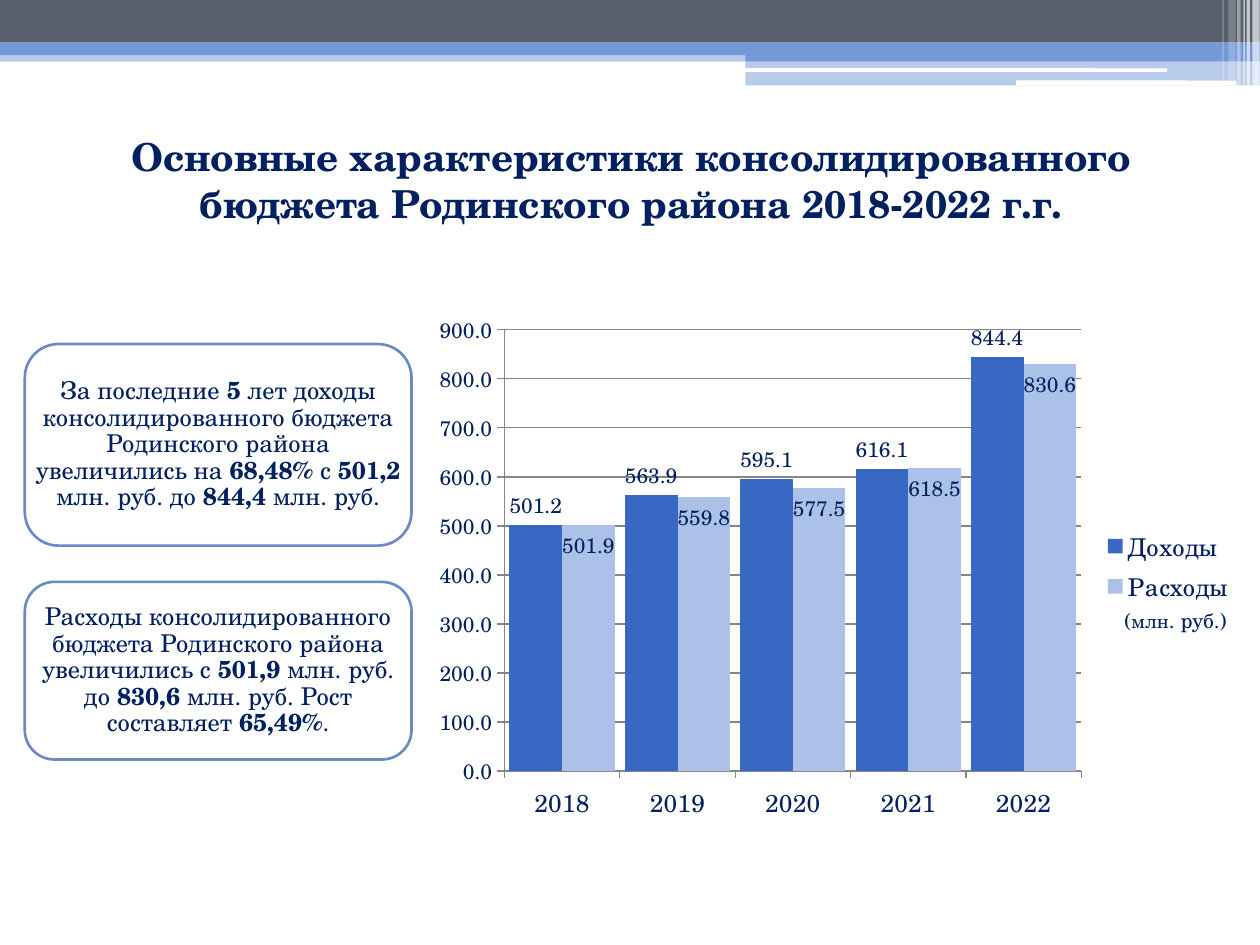
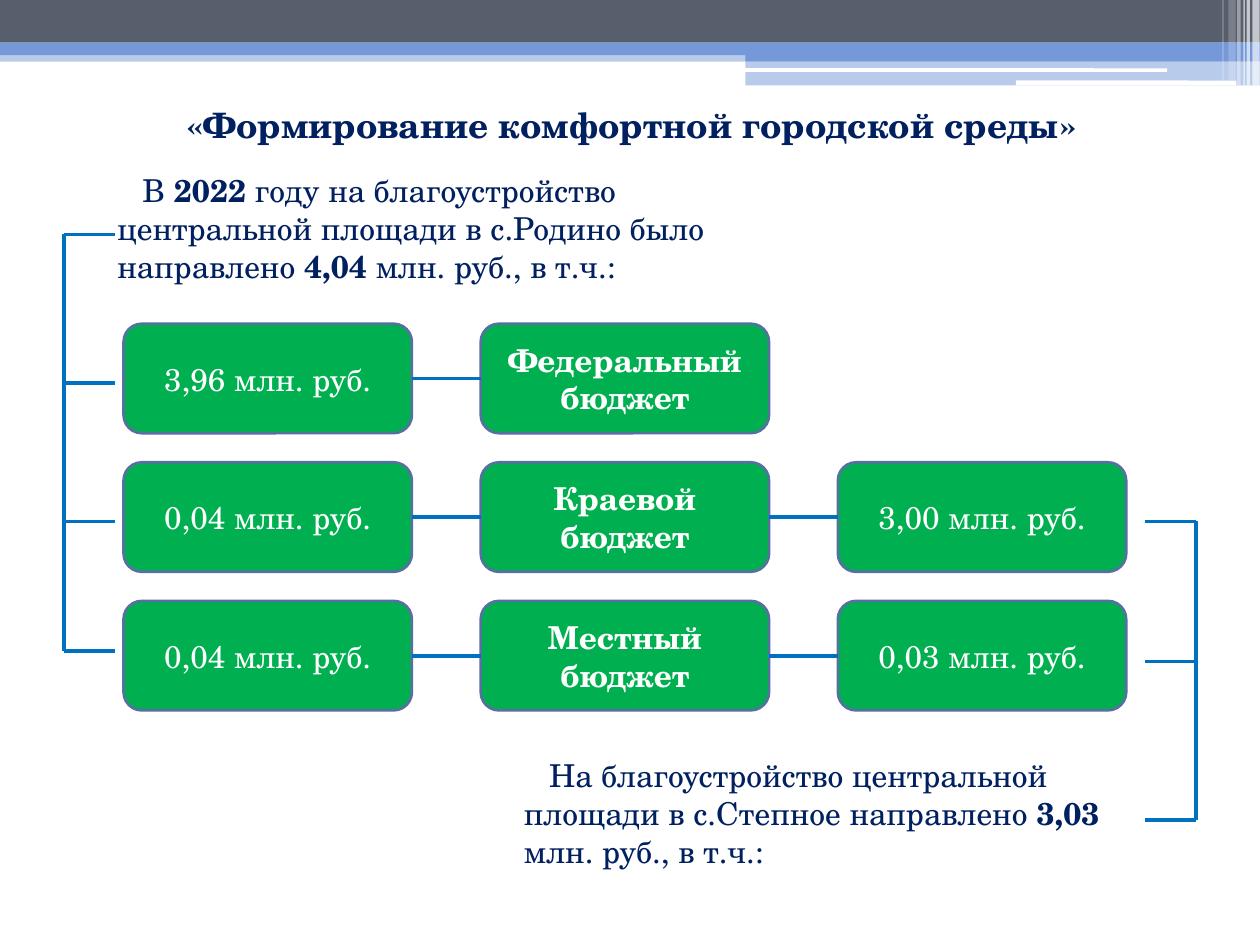
from typing import NamedTuple

from lxml.etree import SubElement
from pptx import Presentation
from pptx.chart.data import CategoryChartData
from pptx.dml.color import RGBColor
from pptx.enum.chart import XL_CHART_TYPE, XL_LABEL_POSITION, XL_LEGEND_POSITION, XL_TICK_MARK
from pptx.enum.shapes import MSO_CONNECTOR, MSO_SHAPE
from pptx.enum.text import MSO_ANCHOR, MSO_AUTO_SIZE, PP_ALIGN
from pptx.oxml.ns import qn
from pptx.util import Pt

FONT = "TeX Gyre Schola"
NAVY, WHITE, GREY, SKY = "002060", "FFFFFF", "575F6D", "7598D9"
GREEN, GREEN_EDGE, NOTE_EDGE, LINK = "00B050", "5770A1", "6A8AC5", "0070C0"
INCOME, EXPENSE, AXIS = "3668C4", "ACC1E8", "868686"
LEFT, RIGHT = 1, 3


class Rect(NamedTuple):
    left: float
    top: float
    width: float
    height: float

    def lengths(self) -> list:
        return [Pt(v) for v in self]


class Band(NamedTuple):
    rect: Rect
    color: str
    opacity: int = 100
    kind: MSO_SHAPE = MSO_SHAPE.RECTANGLE


class Note(NamedTuple):
    rect: Rect
    text: str


class Bracket(NamedTuple):
    spine_x: float
    tick_x: float
    ys: tuple


class Series(NamedTuple):
    name: str
    values: tuple
    color: str
    label_position: XL_LABEL_POSITION


BANDS = [
    Band(Rect(0, 28.8, 720, 6.5), SKY, 50),
    Band(Rect(0, 0, 720, 24.4), GREY),
    Band(Rect(0, 24.4, 720, 7.2), SKY),
    Band(Rect(426, 28, 294, 7), SKY),
    Band(Rect(426, 34.8, 294, 14), SKY, 50),
    Band(Rect(425.5, 39, 241.5, 2), WHITE, kind=MSO_SHAPE.ROUNDED_RECTANGLE),
    Band(Rect(580.5, 46, 126, 2.8), WHITE, kind=MSO_SHAPE.ROUNDED_RECTANGLE),
    Band(Rect(715.6, 0, 4.2, 48.8), WHITE, 65),
    Band(Rect(712.3, 0, 2, 48.8), WHITE, 65),
    Band(Rect(710.6, 0, 0.8, 48.8), WHITE, 60),
    Band(Rect(707, 0, 2, 48.8), WHITE, 40),
    Band(Rect(702, 0, 4.2, 46), WHITE, 20),
    Band(Rect(698.5, 0, 0.8, 46), WHITE, 30),
]
YEARS = ("2018", "2019", "2020", "2021", "2022")
SERIES = [
    Series("Доходы", (501.2, 563.9, 595.1, 616.1, 844.4), INCOME, XL_LABEL_POSITION.OUTSIDE_END),
    Series("Расходы", (501.9, 559.8, 577.5, 618.5, 830.6), EXPENSE, XL_LABEL_POSITION.INSIDE_END),
]
NOTES = [
    Note(Rect(14.2, 196.6, 221, 115.2),
         "За последние **5** лет доходы консолидированного бюджета Родинского района "
         "увеличились на **68,48%** с **501,2** млн. руб. до **844,4** млн. руб."),
    Note(Rect(14.2, 332.5, 221, 101.5),
         "Расходы консолидированного бюджета Родинского района увеличились с **501,9** "
         "млн. руб. до **830,6** млн. руб. Рост составляет **65,49%**."),
]
BUDGET_ROWS = [
    ("3,96 млн. руб.", "**Федеральный бюджет**"),
    ("0,04 млн. руб.", "**Краевой бюджет**", "3,00 млн. руб."),
    ("0,04 млн. руб.", "**Местный бюджет**", "0,03 млн. руб."),
]
BUDGET_CELL = Rect(70.6, 185, 164.8, 62.6)
COLUMN_STEP, ROW_STEP = 204.1, 79.2
BRACKETS = [
    Bracket(36.7, 65.5, (134, 219, 298, 372)),
    Bracket(683.3, 654.5, (298, 378, 468.7)),
]


def rgb(color: str) -> RGBColor:
    return RGBColor.from_string(color)


def style_font(font, size: float, color: str) -> None:
    font.name, font.size = FONT, Pt(size)
    font.color.rgb = rgb(color)


def write(tf, text: str, size: float, color: str = NAVY, align=PP_ALIGN.CENTER,
          anchor=MSO_ANCHOR.MIDDLE, indent: float = 0):
    """Fill a frame with one paragraph; parts between ** marks are bold."""
    tf.word_wrap = True
    tf.auto_size = MSO_AUTO_SIZE.NONE
    tf.vertical_anchor = anchor
    p = tf.paragraphs[0]
    pPr = p._p.get_or_add_pPr()
    pPr.set("marL", "0")
    pPr.set("indent", str(Pt(indent)))
    SubElement(pPr, qn("a:buNone"))
    p.alignment, p.space_before = align, Pt(0)
    for i, part in enumerate(text.split("**")):
        if part:
            r = p.add_run()
            r.text = part
            style_font(r.font, size, color)
            r.font.bold = i % 2 == 1
    return p


def add_box(s, rect: Rect, fill: str, edge: str = "", kind=MSO_SHAPE.ROUNDED_RECTANGLE):
    sp = s.shapes.add_shape(kind, *rect.lengths())
    sp.shadow.inherit = False
    sp.fill.solid()
    sp.fill.fore_color.rgb = rgb(fill)
    if edge:
        sp.line.color.rgb = rgb(edge)
        sp.line.width = Pt(1.5)
    else:
        sp.line.fill.background()
    return sp


def add_line(s, x1: float = 0, y1: float = 0, x2: float = 0, y2: float = 0):
    line = s.shapes.add_connector(MSO_CONNECTOR.STRAIGHT, Pt(x1), Pt(y1), Pt(x2), Pt(y2))
    line.line.color.rgb = rgb(LINK)
    line.line.width = Pt(2.25)
    SubElement(line.element.spPr, qn("a:effectLst"))
    return line


def add_bands_to_master(prs, s) -> None:
    """Draw the header bands on a slide, then move them to the back of the master."""
    tree = prs.slide_master.shapes.element
    for i, band in enumerate(BANDS):
        sp = add_box(s, band.rect, band.color, kind=band.kind)
        if band.opacity < 100:
            color = sp.element.spPr.find(".//" + qn("a:srgbClr"))
            SubElement(color, qn("a:alpha")).set("val", str(band.opacity * 1000))
        sp.element.nvSpPr.cNvPr.set("id", str(100 + i))
        tree.insert(2 + i, sp.element)


def set_title(s, rect: Rect, text: str, size: float) -> None:
    title = s.shapes.title
    title.left, title.top, title.width, title.height = rect.lengths()
    write(title.text_frame, f"**{text}**", size)


def set_layout(parent, index: int, x: float, y: float, w: float, h: float, inner: bool) -> None:
    """Give a plot area or legend a fixed place, in fractions of the chart."""
    for old in parent.findall(qn("c:layout")):
        parent.remove(old)
    layout = SubElement(parent, qn("c:layout"))
    parent.insert(index, layout)
    manual = SubElement(layout, qn("c:manualLayout"))
    values = [("xMode", "edge"), ("yMode", "edge"), ("x", x), ("y", y), ("w", w), ("h", h)]
    if inner:
        values.insert(0, ("layoutTarget", "inner"))
    for tag, value in values:
        SubElement(manual, qn(f"c:{tag}")).set("val", str(value))


def add_budget_chart(s) -> None:
    data = CategoryChartData(number_format="0.0")
    data.categories = YEARS
    for item in SERIES:
        data.add_series(item.name, item.values)
    rect = Rect(241.2, 173.5, 470.9, 300.2)
    chart = s.shapes.add_chart(XL_CHART_TYPE.COLUMN_CLUSTERED, *rect.lengths(), data).chart
    chart.has_title = False
    style_font(chart.font, 18, NAVY)
    plot = chart.plots[0]
    plot.gap_width, plot.vary_by_categories = 19, False
    for series, item in zip(plot.series, SERIES):
        series.format.fill.solid()
        series.format.fill.fore_color.rgb = rgb(item.color)
        labels = series.data_labels
        labels.show_value, labels.position = True, item.label_position
        labels.number_format, labels.number_format_is_linked = "0.0", False
        style_font(labels.font, 12, NAVY)

    values = chart.value_axis
    values.minimum_scale, values.maximum_scale, values.major_unit = 0, 900, 100
    values.tick_labels.number_format = "0.0"
    values.tick_labels.number_format_is_linked = False
    values.major_gridlines.format.line.color.rgb = rgb(AXIS)
    for axis, size in ((values, 12), (chart.category_axis, 14)):
        style_font(axis.tick_labels.font, size, NAVY)
        axis.format.line.color.rgb = rgb(AXIS)
        axis.major_tick_mark = XL_TICK_MARK.OUTSIDE

    chart.has_legend = True
    legend = chart.legend
    legend.position, legend.include_in_layout = XL_LEGEND_POSITION.RIGHT, False
    style_font(legend.font, 14, NAVY)
    plot_area = chart.element.find(".//" + qn("c:plotArea"))
    set_layout(plot_area, 0, 0.1, 0.05, 0.7, 0.84, inner=True)
    set_layout(chart.element.find(".//" + qn("c:legend")), 1, 0.82, 0.42, 0.17, 0.16, inner=False)


def build_characteristics(s) -> None:
    set_title(s, Rect(36.7, 60.5, 648, 84.2),
              "Основные характеристики консолидированного бюджета Родинского района 2018-2022 г.г.", 22)
    add_budget_chart(s)
    unit = s.shapes.add_textbox(*Rect(632.2, 343.4, 79.2, 21.6).lengths())
    p = write(unit.text_frame, "(**млн**. руб.)", 12, anchor=MSO_ANCHOR.TOP)
    p.runs[1].font.size, p.runs[1].font.bold = Pt(11), False
    for note in NOTES:
        tf = add_box(s, note.rect, WHITE, NOTE_EDGE).text_frame
        tf.margin_left = tf.margin_right = tf.margin_top = tf.margin_bottom = Pt(0)
        write(tf, note.text, 14).line_spacing = 0.9


def build_city_environment(s) -> None:
    set_title(s, Rect(36.7, 43.2, 648, 55.4), "«Формирование комфортной городской среды»", 20)
    body = s.placeholders[1]
    body.left, body.top, body.width, body.height = Rect(59.8, 94.3, 351.4, 79.2).lengths()
    outro = s.shapes.add_textbox(*Rect(292.3, 428.4, 362.9, 72.7).lengths())
    for sp, text in (
        (body, "В **2022** году на благоустройство центральной площади в с.Родино было "
               "направлено **4,04** млн. руб., в т.ч.:"),
        (outro, "На благоустройство центральной площади в с.Степное направлено **3,03 **"
                "млн. руб., в т.ч.:"),
    ):
        write(sp.text_frame, text, 18, align=PP_ALIGN.LEFT, anchor=MSO_ANCHOR.TOP, indent=14.4)

    for row, texts in enumerate(BUDGET_ROWS):
        boxes = []
        for column, text in enumerate(texts):
            rect = BUDGET_CELL._replace(left=BUDGET_CELL.left + column * COLUMN_STEP,
                                        top=BUDGET_CELL.top + row * ROW_STEP)
            boxes.append(add_box(s, rect, GREEN, GREEN_EDGE))
            write(boxes[-1].text_frame, text, 18, WHITE)
        for before, after in zip(boxes, boxes[1:]):
            link = add_line(s)
            link.begin_connect(before, RIGHT)
            link.end_connect(after, LEFT)

    for bracket in BRACKETS:
        add_line(s, bracket.spine_x, bracket.ys[0], bracket.spine_x, bracket.ys[-1])
        for y in bracket.ys:
            add_line(s, bracket.tick_x, y, bracket.spine_x, y)


def main() -> None:
    prs = Presentation()
    prs.slide_width, prs.slide_height = Pt(720), Pt(540)
    title_only, title_and_body = prs.slide_layouts[5], prs.slide_layouts[1]
    s = prs.slides.add_slide(title_only)
    add_bands_to_master(prs, s)
    build_characteristics(s)
    build_city_environment(prs.slides.add_slide(title_and_body))
    prs.save("out.pptx")


if __name__ == "__main__":
    main()
